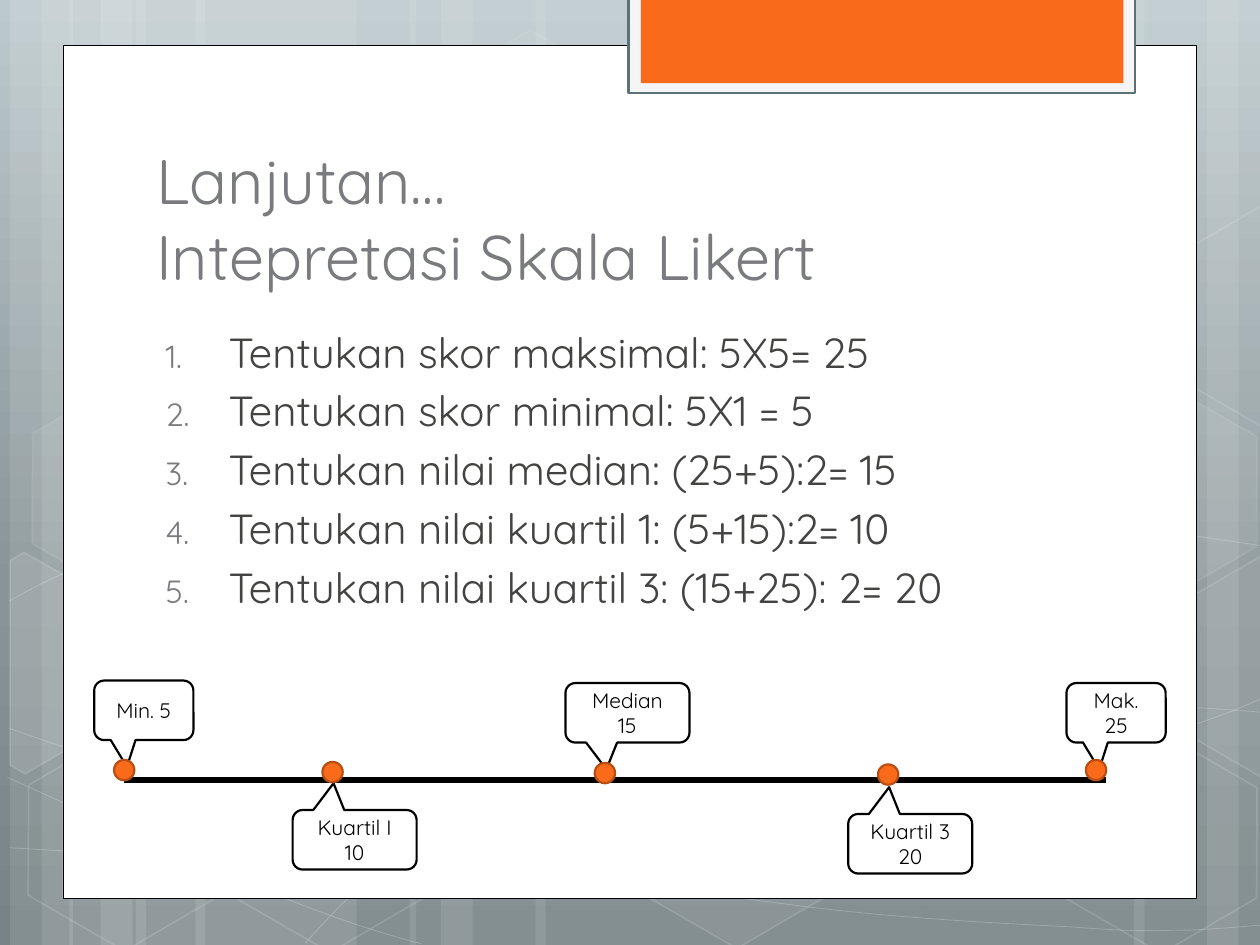
from copy import deepcopy
from dataclasses import dataclass
from math import cos, radians, sin

from lxml import etree
from pptx import Presentation
from pptx.dml.color import RGBColor
from pptx.enum.shapes import MSO_CONNECTOR, MSO_SHAPE
from pptx.enum.text import MSO_ANCHOR, PP_ALIGN
from pptx.oxml.ns import qn
from pptx.util import Cm, Pt

RECTANGLE = MSO_SHAPE.RECTANGLE
HEXAGON = MSO_SHAPE.HEXAGON
CALLOUT = MSO_SHAPE.ROUNDED_RECTANGULAR_CALLOUT
DOT = MSO_SHAPE.FLOWCHART_CONNECTOR
STRAIGHT = MSO_CONNECTOR.STRAIGHT
TOP, MIDDLE, BOTTOM = MSO_ANCHOR.TOP, MSO_ANCHOR.MIDDLE, MSO_ANCHOR.BOTTOM
LEFT, CENTER = PP_ALIGN.LEFT, PP_ALIGN.CENTER

WHITE = RGBColor(0xFF, 0xFF, 0xFF)
BLACK = RGBColor(0, 0, 0)
ORANGE = RGBColor(0xF9, 0x6A, 0x1B)
RUST = RGBColor(0xB8, 0x4E, 0x14)
PALE = RGBColor(0xF5, 0xF5, 0xF5)
SLATE = RGBColor(0x5B, 0x73, 0x78)
GREY = RGBColor(0x79, 0x7B, 0x7E)
CHARCOAL = RGBColor(0x43, 0x43, 0x42)
SKY = [(0, RGBColor(0xBD, 0xCA, 0xCD)), (0.62, RGBColor(0x88, 0x94, 0x97)),
       (1, RGBColor(0x77, 0x83, 0x86))]
FONT = "Quicksand"
TILT = 30

BANDS = [(2.74, 4.45), (0.2, 1.27), (0.84, 2.11), (3.94, 4.45), (1.4, 1.27), (2.03, 2.11),
         (18.62, 4.45), (24.33, 1.27), (22.86, 2.11), (10.8, 7.82), (8.26, 1.27), (8.89, 2.11)]
CURVES = [
    [(0.18, 17.09), (1.55, 17.17), (2.92, 17.25), (4.83, 17.22), (6.73, 17.2), (9.09, 17.15),
     (11.63, 16.89), (14.17, 16.64), (17.78, 16.15), (20.12, 15.67), (22.43, 15.19),
     (24.82, 14.43), (25.58, 14)],
    [(0.18, 12.12), (0.91, 11.71), (1.65, 11.33), (3.07, 10.95), (4.52, 10.57), (6.58, 10.01),
     (8.81, 9.83), (11.07, 9.65), (13.82, 9.63), (16.61, 9.83), (19.41, 10.03),
     (24.05, 10.82), (25.58, 11.02)],
    [(0.15, 15.67), (3.23, 17.07), (6.27, 18.47), (8.48, 19.02)],
    [(0.18, 14.68), (0.97, 14.96), (1.78, 15.24), (3.25, 15.65), (4.72, 16.03), (6.93, 16.66),
     (9.07, 17.09), (11.18, 17.53), (13.84, 17.98), (15.95, 18.24), (18.06, 18.52),
     (20.32, 18.62), (21.67, 18.69), (22.99, 18.8), (23.34, 18.75), (24, 18.75),
     (24.66, 18.72), (25.12, 18.67), (25.58, 18.64)],
    [(6.15, 19.02), (6.6, 18.52), (7.06, 18.01), (7.67, 17.55), (8.28, 17.09), (9.14, 16.59),
     (9.86, 16.23), (10.57, 15.88), (11, 15.72), (11.94, 15.47), (12.85, 15.21),
     (14.55, 14.86), (15.44, 14.68), (16.36, 14.5), (16.48, 14.5), (17.27, 14.45),
     (18.06, 14.38), (19.3, 14.3), (20.17, 14.27), (21.06, 14.25), (22.5, 14.27),
     (22.5, 14.27), (23.07, 14.27), (23.64, 14.27), (24.21, 14.27), (24.66, 14.3),
     (25.1, 14.33), (25.32, 14.35), (25.55, 14.38), (25.48, 14.35), (25.55, 14.38)],
]
HEXAGONS = [(8.48, 0.91, 4, 8), (12.62, 14.96, 6, 12), (0.28, 15.01, 0, 12),
            (0.36, 7.92, 7, 8), (4.42, 15.04, 0, 12), (19.13, 11.51, 10, 12),
            (21.18, 15.06, 0, 12), (21.18, 7.98, 7, 8)]
CUT_HEXAGONS = [
    ((0.91, 13.59), 10, [(0.2, 11.3), (0.48, 11.13), (2.44, 12.24), (2.41, 14.48),
                         (0.51, 15.6), (0.2, 15.42)]),
    ((25.02, 13.21), 4, [(23.52, 12.32), (25.43, 11.2), (25.63, 11.33), (25.63, 15.57),
                         (25.45, 15.67), (23.52, 14.55)]),
    ((25.02, 6.12), 0, [(23.52, 5.26), (25.43, 4.14), (25.65, 4.27), (25.63, 8.51),
                        (25.45, 8.61), (23.52, 7.49)]),
]
STEPS = ["Tentukan skor maksimal: 5X5= 25", "Tentukan skor minimal: 5X1 = 5",
         "Tentukan nilai median: (25+5):2= 15", "Tentukan nilai kuartil 1: (5+15):2= 10",
         "Tentukan nilai kuartil 3: (15+25): 2= 20"]
MILESTONES = [("Min. 5", (0, 0, 2), (0.4, 1.6)),
              ("Mak. 25", (19.6, 0.05, 2), (19.99, 1.6)),
              ("Median 15", (9.5, 0.05, 2.5), (10.09, 1.66)),
              ("Kuartil I 10", (4, 2.61, 2.5), (4.6, 1.64)),
              ("Kuartil 3 20", (15.2, 2.69, 2.5), (15.8, 1.69))]


@dataclass
class Box:
    left: float
    top: float
    width: float
    height: float

    def point(self, x, y):
        return Cm(self.left + x), Cm(self.top + y)

    def area(self, x=0, y=0, width=None, height=None):
        return (*self.point(x, y), Cm(width or self.width), Cm(height or self.height))


def set_alpha(shape, route, percent):
    color = shape._element.spPr.find("/".join(qn(tag) for tag in route))
    etree.SubElement(color, qn("a:alpha"), val=str(percent * 1000))


def paint(shape, fill=None, line=None, weight=1, fill_alpha=100, line_alpha=100):
    shape.shadow.inherit = False
    if fill is None or fill_alpha == 0:
        shape.fill.background()
    else:
        shape.fill.solid()
        shape.fill.fore_color.rgb = fill
        if fill_alpha < 100:
            set_alpha(shape, ["a:solidFill", "a:srgbClr"], fill_alpha)
    if line is None:
        shape.line.fill.background()
    else:
        shape.line.color.rgb = line
        shape.line.width = Pt(weight)
        if line_alpha < 100:
            set_alpha(shape, ["a:ln", "a:solidFill", "a:srgbClr"], line_alpha)
    return shape


def add_preset(page, kind, area, **style):
    return paint(page.shapes.add_shape(kind, *area), **style)


def add_outline(page, box, points, closed, **style):
    first, *rest = [box.point(x, y) for x, y in points]
    builder = page.shapes.build_freeform(*first, scale=1.0)
    builder.add_line_segments(rest, close=closed)
    return paint(builder.convert_to_shape(), **style)


def bend(outline):
    segments = list(outline._element.iter(qn("a:lnTo")))
    for start in range(0, len(segments), 3):
        first, *others = segments[start:start + 3]
        curve = etree.Element(qn("a:cubicBezTo"))
        first.addprevious(curve)
        for segment in (first, *others):
            curve.append(segment[0])
            segment.getparent().remove(segment)


def turn(points, pivot, degrees):
    c, s = cos(radians(degrees)), sin(radians(degrees))
    px, py = pivot
    return [(px + (x - px) * c - (y - py) * s, py + (x - px) * s + (y - py) * c)
            for x, y in points]


def write(shape, text, size, color, align=LEFT, anchor=TOP, space=0):
    frame = shape.text_frame
    frame.word_wrap = True
    frame.vertical_anchor = anchor
    for index, entry in enumerate([text] if isinstance(text, str) else text):
        para = frame.add_paragraph() if index else frame.paragraphs[0]
        para.text = entry
        para.alignment = align
        para.space_before = Pt(space)
        for span in para.runs:
            span.font.name = FONT
            span.font.size = Pt(size)
            span.font.color.rgb = color
    return frame


def number(para, color):
    props = para._p.get_or_add_pPr()
    props.set("marL", str(Cm(1.45)))
    props.set("indent", str(Cm(-1.27)))
    tint = etree.SubElement(props, qn("a:buClr"))
    etree.SubElement(tint, qn("a:srgbClr"), val=str(color))
    etree.SubElement(props, qn("a:buSzPct"), val="76000")
    etree.SubElement(props, qn("a:buFont"), typeface=FONT)
    etree.SubElement(props, qn("a:buAutoNum"), type="arabicPeriod")


def add_backdrop(page, box):
    fill = page.background.fill
    fill.gradient()
    fill.gradient_angle = 270
    stops = page.element.find(".//" + qn("a:gsLst"))
    stops.append(deepcopy(stops[-1]))
    for stop, (position, color) in zip(fill.gradient_stops, SKY):
        stop.position = position
        stop.color.rgb = color
    for left, width in BANDS:
        add_preset(page, RECTANGLE, box.area(left, 0, width), fill=WHITE, fill_alpha=10)
    for nodes in CURVES:
        bend(add_outline(page, box, nodes, False, line=WHITE, weight=0.5, line_alpha=20))
    for left, top, fill_alpha, line_alpha in HEXAGONS:
        hexagon = add_preset(page, HEXAGON, box.area(left, top, 4.45, 3.86), fill=WHITE,
                             line=WHITE, fill_alpha=fill_alpha, line_alpha=line_alpha)
        hexagon.adjustments[0] = 0.285
        hexagon.rotation = TILT
    for center, fill_alpha, points in CUT_HEXAGONS:
        outline = add_outline(page, box, turn(points, center, -TILT), True, fill=WHITE,
                              line=WHITE, fill_alpha=fill_alpha, line_alpha=12)
        outline.rotation = TILT


def add_panel(page, box):
    add_preset(page, RECTANGLE, box.area(), fill=WHITE, line=BLACK, weight=0.5)
    add_preset(page, RECTANGLE, box.area(11.4, -0.96, 10.21, 1.93),
               fill=PALE, line=SLATE, weight=1.25)
    add_preset(page, RECTANGLE, box.area(11.65, -0.96, 9.73, 1.73), fill=ORANGE)


def add_title(page, box):
    write(page.shapes.add_textbox(*box.area()), "Lanjutan…\vIntepretasi Skala Likert",
          size=36, color=GREY, anchor=BOTTOM)


def add_steps(page, box):
    frame = write(page.shapes.add_textbox(*box.area()), STEPS, size=24, color=CHARCOAL, space=4.8)
    for para in frame.paragraphs:
        number(para, GREY)


def add_timeline(page, box):
    axis = page.shapes.add_connector(STRAIGHT, *box.point(0.6, 2), *box.point(20.4, 2))
    axis.line.color.rgb = BLACK
    axis.line.width = Pt(3.75)
    etree.SubElement(axis._element.spPr, qn("a:effectLst"))
    for label, (left, top, width), dot in MILESTONES:
        callout = add_preset(page, CALLOUT, box.area(left, top, width, 1.2),
                             fill=WHITE, line=BLACK, weight=1.25)
        callout.adjustments[0] = -0.17
        callout.adjustments[1] = 0.95 if top < dot[1] else -0.95
        write(callout, label, size=12, color=BLACK, align=CENTER, anchor=MIDDLE)
    for label, place, dot in MILESTONES:
        add_preset(page, DOT, box.area(*dot, 0.41, 0.41), fill=ORANGE, line=RUST, weight=1.25)


def main():
    deck = Presentation()
    deck.slide_width, deck.slide_height = Cm(25.4), Cm(19.05)
    page = deck.slides.add_slide(deck.slide_layouts[6])
    add_backdrop(page, Box(0, 0, 25.4, 19.05))
    add_panel(page, Box(1.27, 0.91, 22.86, 17.2))
    add_title(page, Box(2.9, 2.85, 19.51, 3.18))
    add_steps(page, Box(2.91, 6.45, 18.82, 9.75))
    add_timeline(page, Box(1.9, 13.72, 21.6, 3.87))
    deck.save("out.pptx")


if __name__ == "__main__":
    main()
